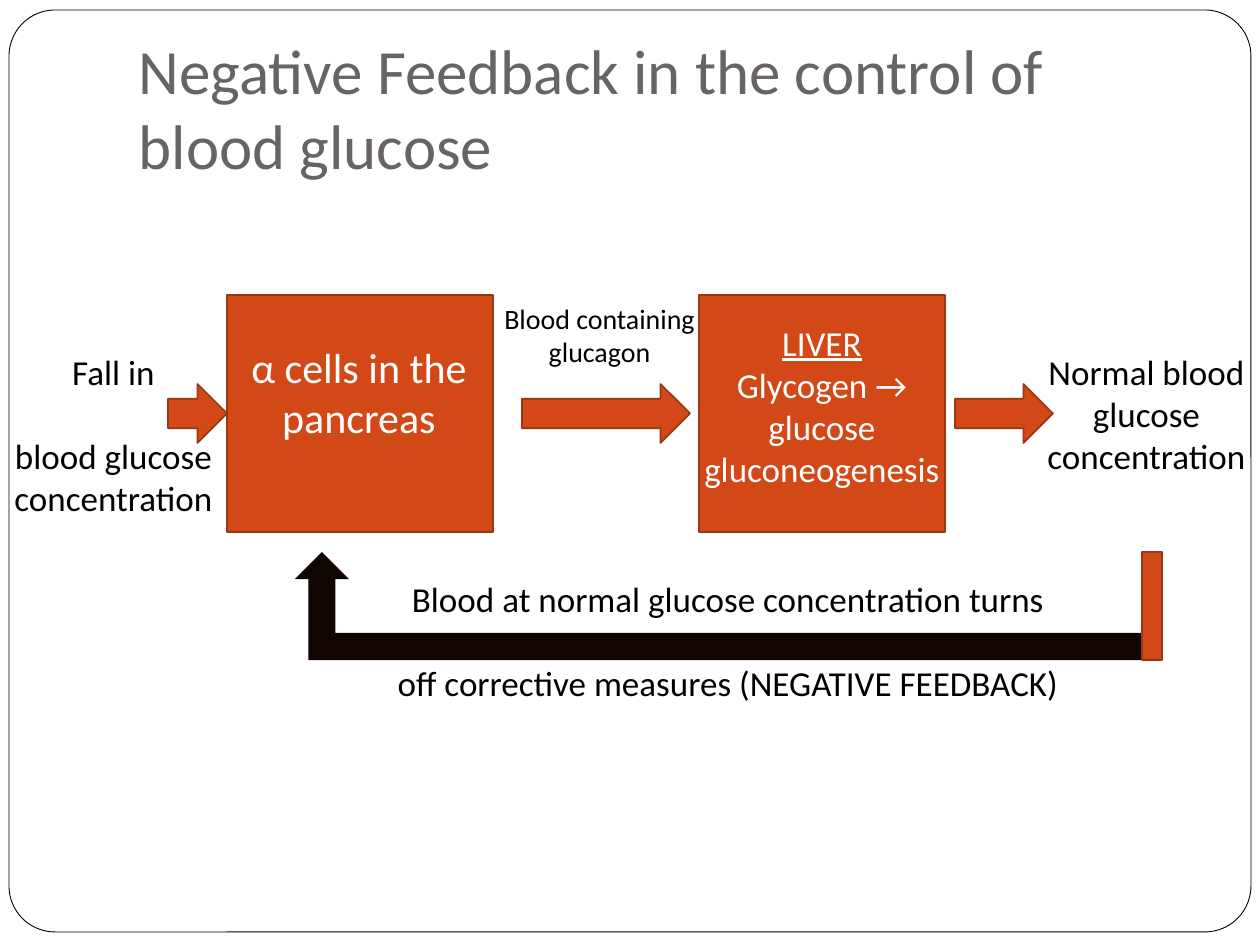
from pptx import Presentation
from pptx import util as u
from pptx.dml.color import RGBColor
from pptx.enum import shapes, text

PX = 914400 / 126
KIND = shapes.MSO_SHAPE
HEX = {"rust": "D34817", "edge": "9C3511", "black": "000000", "dark": "100500",
       "white": "FFFFFF", "gray": "696464"}

TITLE = "Negative Feedback in the control of blood glucose"
FRAME = (9, 10, 1242, 922)
ORGANS = [(227, 295, 266, 237), (699, 295, 246, 237)]
FLOWS = [(522, 168), (955, 98), (168, 59)]  # left, width
FLOW_TOP, FLOW_H = 384, 59
LOOP = (295, 552, 867, 108)
STEM_W = 20
GAP = 24.4  # one line of 20 pt text

# place, paragraphs, format
LABELS = [
    ((0, 344, 227, 183), ["Fall in", "blood glucose concentration"], {"gap": GAP}),
    ((236, 335, 246, 115), ["α cells in the pancreas"], {"size": 24, "ink": "white"}),
    ((689, 315, 266, 183), ["LIVER", "Glycogen → glucose gluconeogenesis"],
     {"ink": "white", "under": True}),
    ((1033, 344, 227, 140), ["Normal blood glucose concentration"], {}),
    ((364, 571, 728, 140),
     ["Blood at normal glucose concentration turns",
      "off corrective measures (NEGATIVE FEEDBACK)"], {"gap": GAP}),
    ((452, 295, 295, 81), ["Blood containing glucagon"], {"size": 16}),
]


def emu(box):
    return [u.Emu(round(n * PX)) for n in box]


def color(name):
    return RGBColor.from_string(HEX[name])


def write(frame, paras, size=20, ink="black", align=text.PP_ALIGN.CENTER,
          gap=0, under=False):
    """Fill a text frame; gap goes before later paragraphs, under marks the first."""
    frame.word_wrap = True
    for i, words in enumerate(paras):
        para = frame.add_paragraph() if i else frame.paragraphs[0]
        para.alignment = align
        para.space_before = u.Pt(gap if i else 0)
        run = para.add_run()
        run.text = words
        font = run.font
        font.name, font.size = "Calibri", u.Pt(size)
        font.color.rgb = color(ink)
        if under and i == 0:
            font.underline = True


def draw(kind, box, fill="rust", line="edge", width=1):
    shape = slide.shapes.add_shape(kind, *emu(box))
    shape.shadow.inherit = False
    shape.fill.solid()
    shape.fill.fore_color.rgb = color(fill)
    shape.line.color.rgb = color(line)
    shape.line.width = u.Pt(width)
    return shape


deck = Presentation()
deck.slide_width, deck.slide_height = u.Inches(10), u.Inches(7.5)
slide = deck.slides.add_slide(deck.slide_layouts[5])

frame = draw(KIND.ROUNDED_RECTANGLE, FRAME, "white", "black", 0.5)
frame.adjustments[0] = 0.05
slide.shapes._spTree.insert(2, frame._element)  # behind the title

title = slide.shapes.title
title.left, title.top, title.width, title.height = emu((126, 38, 1071, 157))
body = title.text_frame
body.vertical_anchor = text.MSO_ANCHOR.BOTTOM
body.margin_bottom = u.Inches(0.1)
write(body, [TITLE], size=36, ink="gray", align=text.PP_ALIGN.LEFT)

for box in ORGANS:
    draw(KIND.RECTANGLE, box)
for left, wide in FLOWS:
    draw(KIND.RIGHT_ARROW, (left, FLOW_TOP, wide, FLOW_H))

loop = draw(KIND.BENT_UP_ARROW, LOOP, "dark", "dark")
loop.line.fill.background()
loop._element.spPr.xfrm.set("flipH", "1")
x, y, w, h = LOOP
draw(KIND.RECTANGLE, (x + w - STEM_W, y, STEM_W, h))

for box, paras, form in LABELS:
    label = slide.shapes.add_textbox(*emu(box))
    write(label.text_frame, paras, **form)

deck.save("out.pptx")
